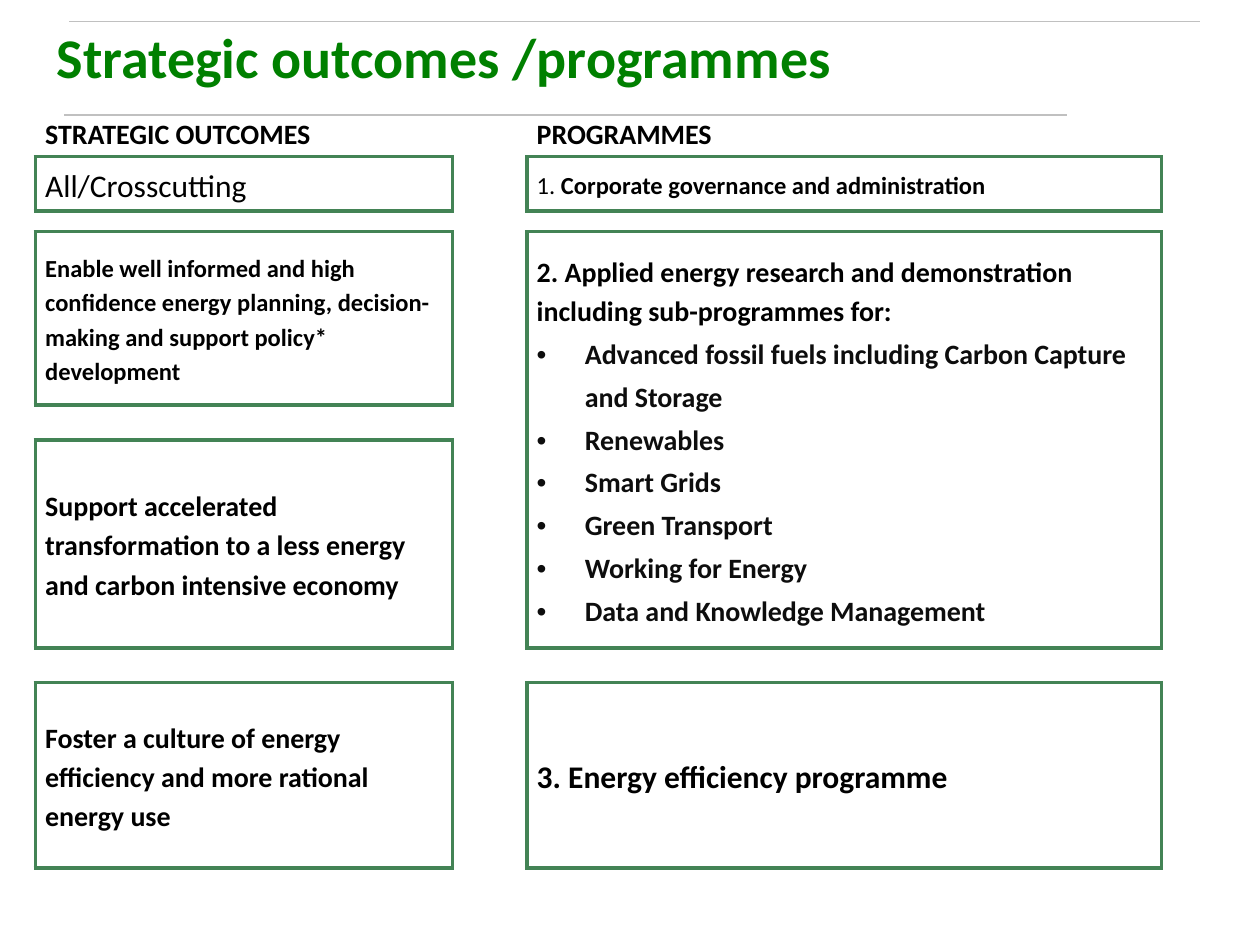
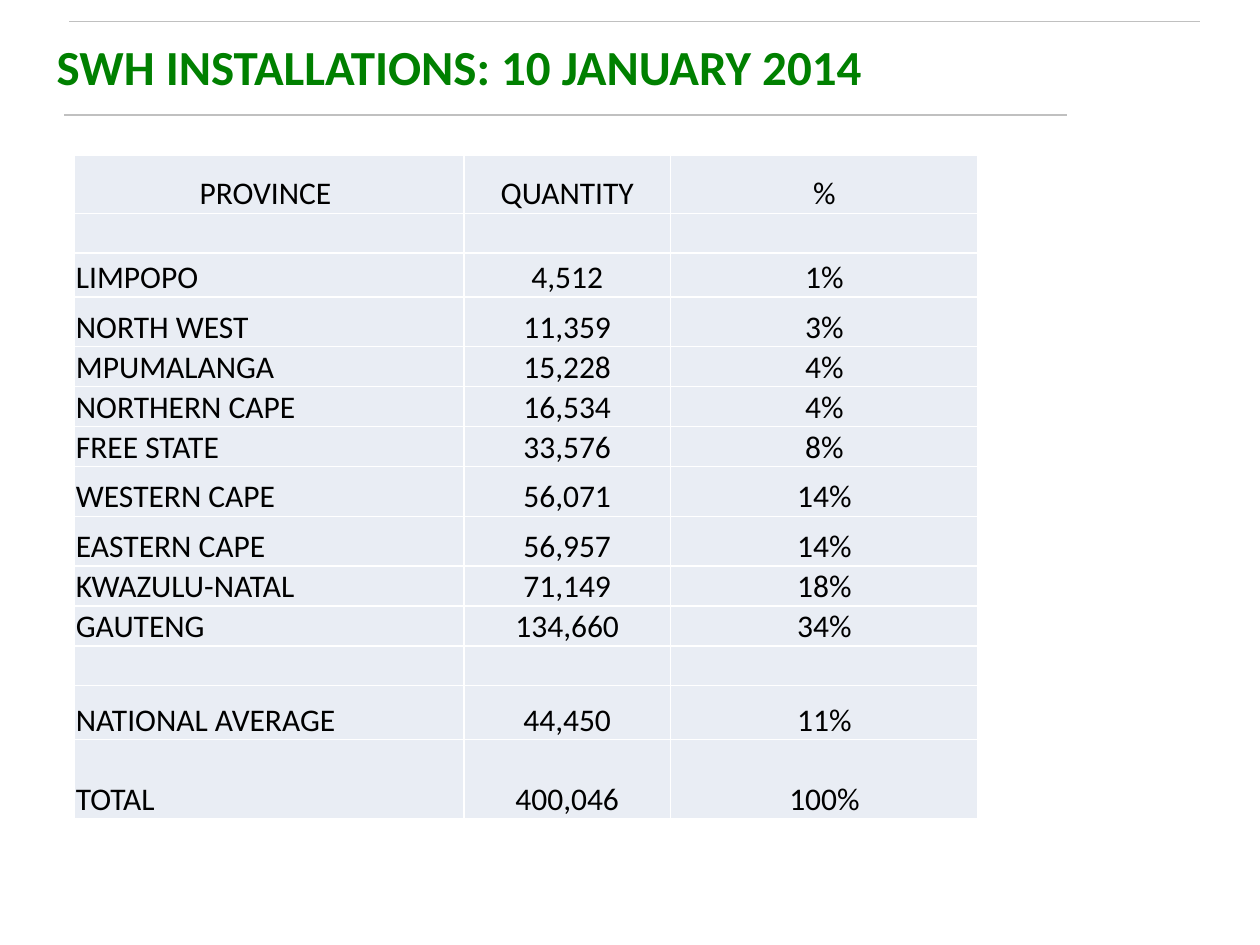
from dataclasses import dataclass
from typing import Any, NamedTuple

from lxml import etree
from pptx import Presentation
from pptx.dml.color import RGBColor
from pptx.enum.shapes import MSO_CONNECTOR
from pptx.enum.text import MSO_ANCHOR, MSO_AUTO_SIZE, PP_ALIGN
from pptx.oxml.ns import qn
from pptx.util import Cm, Pt

LINE = MSO_CONNECTOR.STRAIGHT
MIDDLE, BOTTOM = MSO_ANCHOR.MIDDLE, MSO_ANCHOR.BOTTOM
LEFT, CENTER = PP_ALIGN.LEFT, PP_ALIGN.CENTER
NO_FIT = MSO_AUTO_SIZE.NONE

COLORS = {
    "title": "008000",
    "rule": "C0C0C0",
    "box": "438355",
    "text": "000000",
    "bullet": "0D0D0D",
    "cell": "E9EDF4",
    "grid": "FFFFFF",
}
FONT = "Calibri"
TITLE_ONLY = 5
NO_STYLE = "{2D5ABB26-0587-4C30-8999-92F81FD0307C}"
BULLET_INDENT = Cm(0.97)
BOX_MARGINS = {"margin_left": Cm(0.2), "margin_right": Cm(0.2),
               "margin_top": Cm(0.1), "margin_bottom": Cm(0.1)}
GRID_MARGINS = {"margin_left": Cm(0.03), "margin_right": Cm(0.03),
                "margin_top": Cm(0.03), "margin_bottom": 0}
NO_MARGINS = dict.fromkeys(BOX_MARGINS, 0)
SIDES = {"lnL": (0, -1), "lnR": (0, 1), "lnT": (-1, 0), "lnB": (1, 0)}


class Rule(NamedTuple):
    x1: float
    x2: float
    y: float


class Run(NamedTuple):
    text: str
    size: int = 16
    bold: bool = True
    color: str = "text"


@dataclass
class Para:
    runs: list[Run]
    spacing: float | None = 1.15
    align: PP_ALIGN = LEFT
    bullet: bool = False


@dataclass
class Box:
    row: int
    col: int
    paras: list[Para]
    span: int = 1
    bordered: bool = True


RULES = [Rule(1.3, 21.51, 2.32), Rule(1.4, 24.2, 0.43)]

SUB_PROGRAMMES = [
    "Advanced fossil fuels including Carbon Capture and Storage",
    "Renewables",
    "Smart Grids",
    "Green Transport",
    "Working for Energy",
    "Data and Knowledge Management",
]
BOXES = [
    Box(0, 0, [Para([Run("STRATEGIC OUTCOMES")])], bordered=False),
    Box(0, 2, [Para([Run("PROGRAMMES")])], bordered=False),
    Box(1, 0, [Para([Run("All/Crosscutting", 18, False)])]),
    Box(1, 2, [Para([Run("1. ", 14, False),
                     Run("Corporate governance and administration", 14)])]),
    Box(3, 0, [Para([Run("Enable well informed and high confidence energy planning, "
                         "decision-making and support policy* development", 14)])], 5),
    Box(3, 2, [Para([Run("2. Applied energy research and demonstration "
                         "including sub-programmes for:")])]
        + [Para([Run(name, color="bullet")], 1.25, bullet=True)
           for name in SUB_PROGRAMMES], 12),
    Box(9, 0, [Para([Run("Support accelerated transformation to a less energy "
                         "and carbon intensive economy")])], 6),
    Box(16, 0, [Para([Run("Foster a culture of energy efficiency and more "
                          "rational energy use")])], 5),
    Box(16, 2, [Para([Run("3. Energy efficiency programme", 18)])], 5),
]
BOX_COLS = [8.41, 1.5, 12.8, 1.5]
BOX_ROWS = [1.03, 1.09, 0.42] + [0.7] * 16 + [0, 1.6]

INSTALLATIONS = [
    (1.18, "PROVINCE ", "QUANTITY", "%"),
    (0.8, "", "", ""),
    (0.89, "LIMPOPO", "4,512", "1%"),
    (1, "NORTH WEST", "11,359", "3%"),
    (0.8, "MPUMALANGA", "15,228", "4%"),
    (0.8, "NORTHERN CAPE", "16,534", "4%"),
    (0.8, "FREE STATE", "33,576", "8%"),
    (1, "WESTERN CAPE", "56,071", "14%"),
    (1, "EASTERN CAPE", "56,957", "14%"),
    (0.8, "KWAZULU-NATAL", "71,149", "18%"),
    (0.8, "GAUTENG", "134,660", "34%"),
    (0.8, "", "", ""),
    (1.09, "NATIONAL AVERAGE", "44,450", "11%"),
    (1.6, "TOTAL", "400,046", "100%"),
]
GRID_COLS = [7.85, 4.17, 6.2]


def rgb(name: str) -> RGBColor:
    return RGBColor.from_string(COLORS[name])


def apply(target: Any, values: dict[str, Any]) -> None:
    for key, value in values.items():
        setattr(target, key, value)


def add_run(p: Any, run: Run) -> None:
    r = p.add_run()
    r.text = run.text
    apply(r.font, {"name": FONT, "size": Pt(run.size), "bold": run.bold})
    r.font.color.rgb = rgb(run.color)


def add_bullet(p: Any) -> None:
    pPr = p._p.get_or_add_pPr()
    pPr.set("marL", str(BULLET_INDENT))
    pPr.set("indent", str(-BULLET_INDENT))
    etree.SubElement(pPr, qn("a:buFont"), typeface="Arial")
    etree.SubElement(pPr, qn("a:buChar"), char="•")


def write(tf: Any, paras: list[Para]) -> None:
    for i, para in enumerate(paras):
        p = tf.add_paragraph() if i else tf.paragraphs[0]
        apply(p, {"alignment": para.align, "line_spacing": para.spacing})
        if para.bullet:
            add_bullet(p)
        for run in para.runs:
            add_run(p, run)


def shrink_empty(cell: Any) -> None:
    apply(cell, NO_MARGINS)
    etree.SubElement(cell.text_frame.paragraphs[0]._p, qn("a:endParaRPr"), sz="100")


def add_borders(cell: Any, sides: list[str], color: str, width: float) -> None:
    tcPr = cell._tc.get_or_add_tcPr()
    for side in sides:
        ln = etree.SubElement(tcPr, qn(f"a:{side}"), w=str(Pt(width)))
        fill = etree.SubElement(ln, qn("a:solidFill"))
        etree.SubElement(fill, qn("a:srgbClr"), val=COLORS[color])


def add_slide(prs: Any, title: str, size: int, top: float, width: float) -> Any:
    s = prs.slides.add_slide(prs.slide_layouts[TITLE_ONLY])
    for rule in RULES:
        line = s.shapes.add_connector(LINE, Cm(rule.x1), Cm(rule.y), Cm(rule.x2), Cm(rule.y))
        line.line.color.rgb = rgb("rule")
        line.line.width = Pt(0.75)
        etree.SubElement(line._element.spPr, qn("a:effectLst"))
    sp = s.shapes.title
    apply(sp, {"left": Cm(0.89), "top": Cm(top), "width": Cm(width), "height": Cm(1.19)})
    apply(sp.text_frame, {"auto_size": NO_FIT, "vertical_anchor": MIDDLE})
    write(sp.text_frame, [Para([Run(title, size, color="title")], None)])
    return s


def add_table(s: Any, left: float, top: float, cols: list[float], rows: list[float]) -> Any:
    frame = s.shapes.add_table(len(rows), len(cols), Cm(left), Cm(top),
                               Cm(sum(cols)), Cm(sum(rows)))
    table = frame.table
    apply(table, {"first_row": False, "horz_banding": False})
    table._tbl.tblPr.find(qn("a:tableStyleId")).text = NO_STYLE
    for column, width in zip(table.columns, cols):
        column.width = Cm(width)
    for row, height in zip(table.rows, rows):
        row.height = Cm(height)
    return table


def outcomes_slide(prs: Any) -> None:
    s = add_slide(prs, "Strategic outcomes /programmes", 32, 0.53, 23.24)
    table = add_table(s, 0.71, 2.13, BOX_COLS, BOX_ROWS)
    starts = {(box.row, box.col): box for box in BOXES}
    owner = {(box.row + i, box.col): box.row
             for box in BOXES if box.bordered for i in range(box.span)}
    for r in range(len(BOX_ROWS)):
        for c in range(len(BOX_COLS)):
            cell = table.cell(r, c)
            box = starts.get((r, c))
            sides = [side for side, (dr, dc) in SIDES.items()
                     if (box and box.bordered)
                     or owner.get((r, c)) != owner.get((r + dr, c + dc))]
            add_borders(cell, sides, "box", 2.25)
            cell.fill.background()
            if not box:
                shrink_empty(cell)
                continue
            apply(cell, BOX_MARGINS)
            cell.vertical_anchor = MIDDLE if box.bordered else BOTTOM
            write(cell.text_frame, box.paras)
    for box in BOXES:
        if box.span > 1:
            table.cell(box.row, box.col).merge(table.cell(box.row + box.span - 1, box.col))


def installations_slide(prs: Any) -> None:
    s = add_slide(prs, "SWH INSTALLATIONS: 10 JANUARY 2014", 28, 0.74, 22.86)
    table = add_table(s, 1.5, 3.12, GRID_COLS, [row[0] for row in INSTALLATIONS])
    for r, (_, *values) in enumerate(INSTALLATIONS):
        for c, value in enumerate(values):
            cell = table.cell(r, c)
            add_borders(cell, list(SIDES), "grid", 1)
            cell.fill.solid()
            cell.fill.fore_color.rgb = rgb("cell")
            if not value:
                shrink_empty(cell)
                continue
            apply(cell, GRID_MARGINS)
            cell.vertical_anchor = BOTTOM
            align = LEFT if c == 0 and r else CENTER
            write(cell.text_frame, [Para([Run(value, 18, False)], None, align)])


def main() -> None:
    prs = Presentation()
    apply(prs, {"slide_width": Cm(25.4), "slide_height": Cm(19.05)})
    outcomes_slide(prs)
    installations_slide(prs)
    prs.save("out.pptx")


if __name__ == "__main__":
    main()
